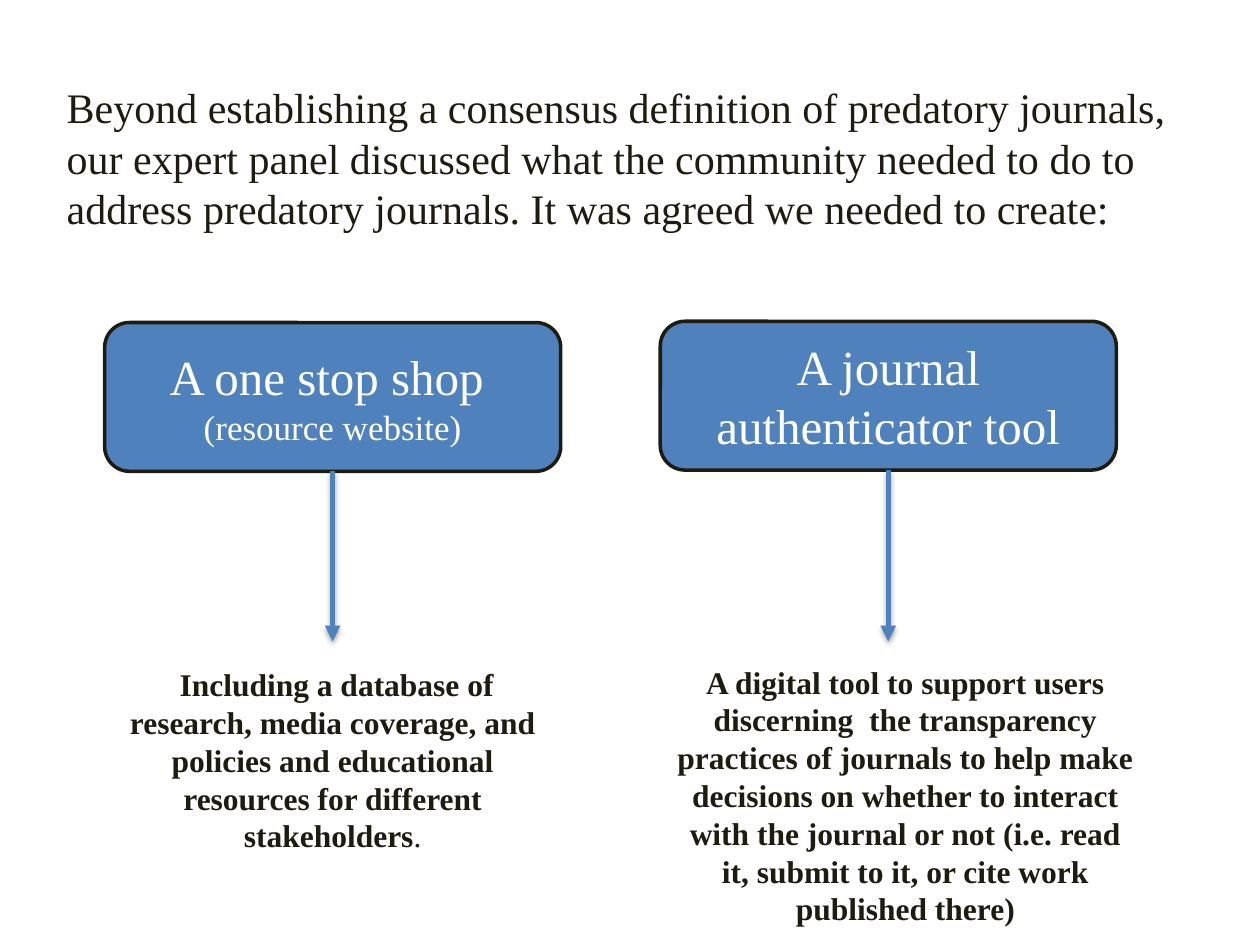
from dataclasses import dataclass

from lxml import etree
from pptx import Presentation
from pptx.dml.color import RGBColor
from pptx.enum import shapes, text
from pptx.oxml import ns
from pptx.util import Pt

INK = RGBColor(0x1E, 0x1C, 0x11)
BLUE = RGBColor(0x4F, 0x81, 0xBD)
WHITE = RGBColor(0xFF, 0xFF, 0xFF)
FONT = "Times New Roman"

BOX_WIDTH, BOX_HEIGHT = 260.6, 85
ARROW_END = 366.5


@dataclass(frozen=True)
class Frame:
    left: float
    top: float
    width: float
    height: float

    def lengths(self) -> tuple:
        return Pt(self.left), Pt(self.top), Pt(self.width), Pt(self.height)


@dataclass(frozen=True)
class Run:
    text: str
    size: float
    bold: bool = False


@dataclass(frozen=True)
class Resource:
    """A box with an arrow down to its description."""
    left: float
    top: float
    title: list[list[Run]]
    description: list[list[Run]]
    description_frame: Frame


INTRODUCTION = (
    "Beyond establishing a consensus definition of predatory journals, our expert panel "
    "discussed what the community needed to do to address predatory journals. "
    "It was agreed we needed to create:"
)
RESOURCES = [
    Resource(
        59.8, 184.3,
        [[Run("A one stop shop ", 28)], [Run("(resource website)", 20)]],
        [[Run(" Including a database of research, media coverage, and policies and "
              "educational resources for different stakeholders", 18, True),
          Run(".", 18)]],
        Frame(59.8, 376.6, 260.6, 116.6),
    ),
    Resource(
        377.3, 183.6,
        [[Run("A journal authenticator tool", 28)]],
        [[Run("A digital tool to support users discerning  the transparency practices of "
              "journals to help make decisions on whether to interact with the journal or "
              "not (i.e. read it, submit to it, or cite work published there)", 18, True)]],
        Frame(378.7, 375.1, 277.2, 159.8),
    ),
]


def write_text(shape, paragraphs: list[list[Run]], *, color=INK,
               align=text.PP_ALIGN.CENTER, anchor=text.MSO_ANCHOR.TOP,
               before: float = 0, after: float = 0) -> None:
    frame = shape.text_frame
    frame.word_wrap = True
    frame.vertical_anchor = anchor
    for index, runs in enumerate(paragraphs):
        paragraph = frame.add_paragraph() if index else frame.paragraphs[0]
        paragraph.alignment = align
        paragraph.space_before, paragraph.space_after = Pt(before), Pt(after)
        for item in runs:
            run = paragraph.add_run()
            run.text = item.text
            run.font.name = FONT
            run.font.size = Pt(item.size)
            run.font.bold = item.bold
            run.font.color.rgb = color


def add_box(slide, resource: Resource):
    frame = Frame(resource.left, resource.top, BOX_WIDTH, BOX_HEIGHT)
    box = slide.shapes.add_shape(shapes.MSO_SHAPE.ROUNDED_RECTANGLE, *frame.lengths())
    box.shadow.inherit = False
    box.fill.solid()
    box.fill.fore_color.rgb = BLUE
    box.line.color.rgb = INK
    box.line.width = Pt(2)
    write_text(box, resource.title, color=WHITE, anchor=text.MSO_ANCHOR.MIDDLE)
    return box


def add_arrow(slide, box) -> None:
    """Draw a shadowed arrow down from the middle of the box's bottom side."""
    center = box.left + box.width // 2
    arrow = slide.shapes.add_connector(
        shapes.MSO_CONNECTOR.STRAIGHT, center, box.top + box.height, center, Pt(ARROW_END))
    arrow.begin_connect(box, 2)
    arrow.line.color.rgb = BLUE
    arrow.line.width = Pt(3)
    properties = arrow.element.spPr
    line = properties.find(ns.qn("a:ln"))
    etree.SubElement(line, ns.qn("a:tailEnd"), type="triangle")
    effects = etree.SubElement(properties, ns.qn("a:effectLst"))
    shadow = etree.SubElement(
        effects, ns.qn("a:outerShdw"), blurRad=str(Pt(3.1)), dist=str(Pt(1.8)),
        dir="5400000", rotWithShape="0")
    color = etree.SubElement(shadow, ns.qn("a:srgbClr"), val="000000")
    etree.SubElement(color, ns.qn("a:alpha"), val="35000")


def add_text(slide, frame: Frame, paragraphs: list[list[Run]], *,
             auto_size=text.MSO_AUTO_SIZE.NONE, **text_format) -> None:
    text_box = slide.shapes.add_textbox(*frame.lengths())
    write_text(text_box, paragraphs, **text_format)
    text_box.text_frame.auto_size = auto_size


def main() -> None:
    presentation = Presentation()
    presentation.slide_width, presentation.slide_height = Pt(720), Pt(540)
    slide = presentation.slides.add_slide(presentation.slide_layouts[6])

    add_text(slide, Frame(31, 43.2, 658, 351.4), [[Run(INTRODUCTION, 24)]],
             align=text.PP_ALIGN.LEFT, before=6, after=12)
    boxes = [add_box(slide, resource) for resource in RESOURCES]
    for box in boxes:
        add_arrow(slide, box)
    for resource in RESOURCES:
        add_text(slide, resource.description_frame, resource.description,
                 auto_size=text.MSO_AUTO_SIZE.SHAPE_TO_FIT_TEXT)

    presentation.save("out.pptx")


if __name__ == "__main__":
    main()
